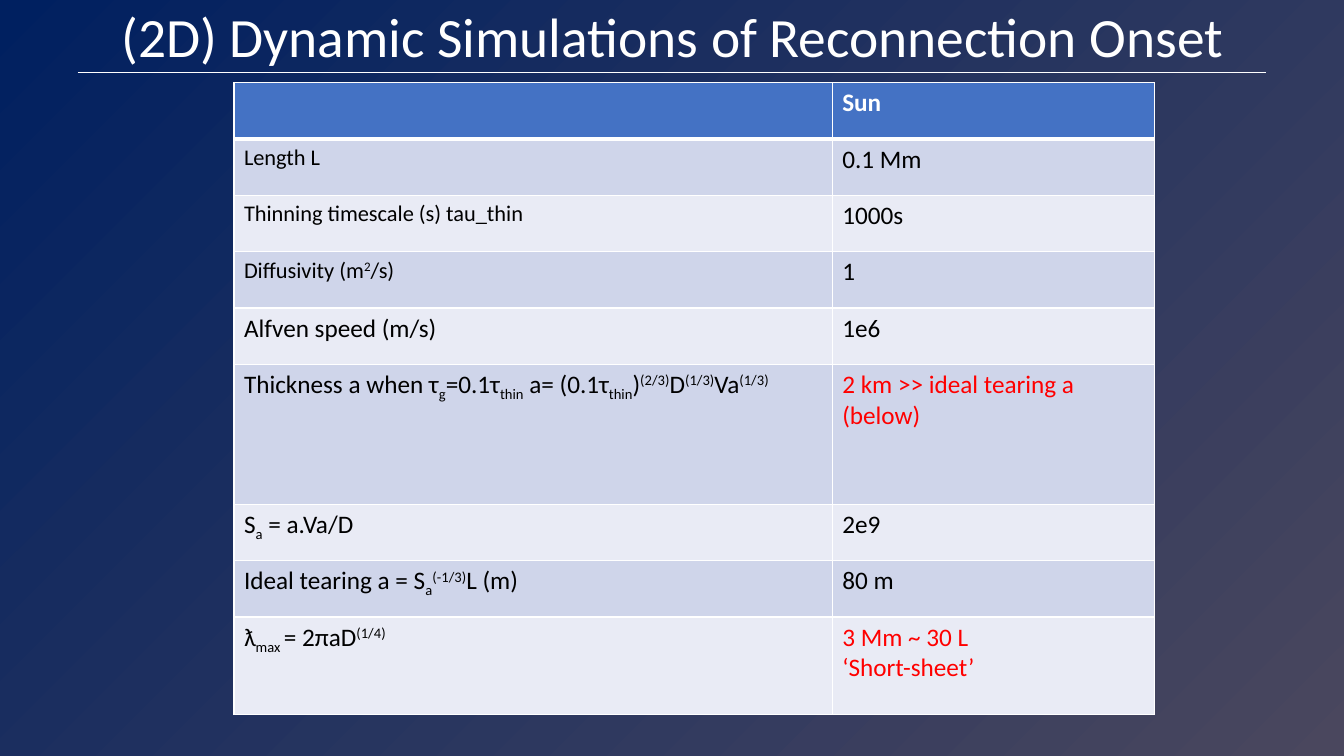
from lxml import etree
from pptx import Presentation
from pptx.dml.color import RGBColor
from pptx.enum.shapes import MSO_CONNECTOR
from pptx.enum.text import MSO_ANCHOR, PP_ALIGN
from pptx.oxml.ns import qn
from pptx.util import Inches, Pt

STRAIGHT = MSO_CONNECTOR.STRAIGHT
MIDDLE = MSO_ANCHOR.MIDDLE
CENTER = PP_ALIGN.CENTER
FONT = "Calibri"
WHITE, BLACK, RED = "FFFFFF", "000000", "FF0000"
HEAD, BANDS = "4472C4", ("E9EBF5", "CFD5EA")
SUB, SUP = -25000, 30000
COLS = (0.65, 0.35)
ROWS = (0.56,) * 5 + (1.39, 0.56, 0.56, 0.97)

LABELS = [
    [],
    ["Length L"],
    ["Thinning timescale (s) tau_thin"],
    ["Diffusivity (m", ("2", SUP), "/s)"],
    ["Alfven speed (m/s)"],
    ["Thickness a when τ", ("g", SUB), "=0.1τ", ("thin", SUB), " a= (0.1τ",
     ("thin", SUB), ")", ("(2/3)", SUP), "D", ("(1/3)", SUP), "Va", ("(1/3)", SUP)],
    ["S", ("a", SUB), " = a.Va/D"],
    ["Ideal tearing a = S", ("a", SUB), ("(-1/3)", SUP), "L (m)"],
    ["ƛ", ("max ", SUB), "= 2πaD", ("(1/4)", SUP)],
]
SUN = [
    ["Sun"], ["0.1 Mm"], ["1000s"], ["1"], ["1e6"],
    ["2 km >> ideal tearing a (below)"], ["2e9"], ["80 m"],
    ["3 Mm ~ 30 L", "‘Short-sheet’"],
]
SMALL_ROWS = (1, 2, 3)
RED_ROWS = (5, 8)


def color(code):
    return RGBColor.from_string(code)


def add_runs(para, parts, size, code, bold=False):
    for part in parts:
        text, shift = part if isinstance(part, tuple) else (part, 0)
        run = para.add_run()
        run.text = text
        run.font.name = FONT
        run.font.size = Pt(size)
        run.font.bold = bold
        run.font.color.rgb = color(code)
        if shift:
            run.font._element.set("baseline", str(shift))


def fill_cell(cell, lines, size, code, bold, back):
    cell.fill.solid()
    cell.fill.fore_color.rgb = color(back)
    frame = cell.text_frame
    for i, parts in enumerate(lines):
        para = frame.add_paragraph() if i else frame.paragraphs[0]
        add_runs(para, parts, size, code, bold)


def edge_cell(cell, widths):
    props = cell._tc.get_or_add_tcPr()
    for i, (side, width) in enumerate(zip("LRTB", widths)):
        line = etree.Element(qn("a:ln" + side), w=str(Pt(width)))
        solid = etree.SubElement(line, qn("a:solidFill"))
        etree.SubElement(solid, qn("a:srgbClr"), val=WHITE)
        props.insert(i, line)


def paint_back(slide):
    fill = slide.background.fill
    fill.gradient()
    fill.gradient_angle = 315
    for stop, code, place in zip(fill.gradient_stops, ("002060", "4A475E"), (0, 1)):
        stop.color.rgb = color(code)
        stop.position = place


def add_title(slide, left, top, width, height):
    box = slide.shapes.add_textbox(left, top, width, height)
    frame = box.text_frame
    frame.word_wrap = True
    frame.vertical_anchor = MIDDLE
    para = frame.paragraphs[0]
    para.alignment = CENTER
    para.line_spacing = 0.9
    add_runs(para, ["(2D) Dynamic Simulations of Reconnection Onset"], 39.6, WHITE)


def add_rule(slide, left, top, width):
    rule = slide.shapes.add_connector(STRAIGHT, left, top, left + width, top)
    rule.line.color.rgb = color(WHITE)
    rule.line.width = Pt(1)
    etree.SubElement(rule._element.spPr, qn("a:effectLst"))


def add_grid(slide, left, top, width, height):
    grid = slide.shapes.add_table(len(ROWS), len(COLS), left, top, width, height).table
    for col, share in zip(grid.columns, COLS):
        col.width = int(width * share)
    for r, share in enumerate(ROWS):
        grid.rows[r].height = int(height * share / sum(ROWS))
        back = BANDS[r % 2] if r else HEAD
        ink = BLACK if r else WHITE
        size = 16 if r in SMALL_ROWS else 18
        note = RED if r in RED_ROWS else ink
        label, value = grid.cell(r, 0), grid.cell(r, 1)
        fill_cell(label, [LABELS[r]], size, ink, r == 0, back)
        fill_cell(value, [[line] for line in SUN[r]], 18, note, r == 0, back)
        for cell in (label, value):
            edge_cell(cell, (1, 1, 3 if r == 1 else 1, 3 if r == 0 else 1))


def main():
    deck = Presentation()
    deck.slide_width, deck.slide_height = Inches(13.33), Inches(7.5)
    slide = deck.slides.add_slide(deck.slide_layouts[6])
    paint_back(slide)
    add_rule(slide, Inches(0.77), Inches(0.72), Inches(11.79))
    add_title(slide, Inches(0.92), Inches(0.16), Inches(11.5), Inches(0.47))
    add_grid(slide, Inches(2.32), Inches(0.82), Inches(9.13), Inches(6.27))
    deck.save("out.pptx")


if __name__ == "__main__":
    main()
